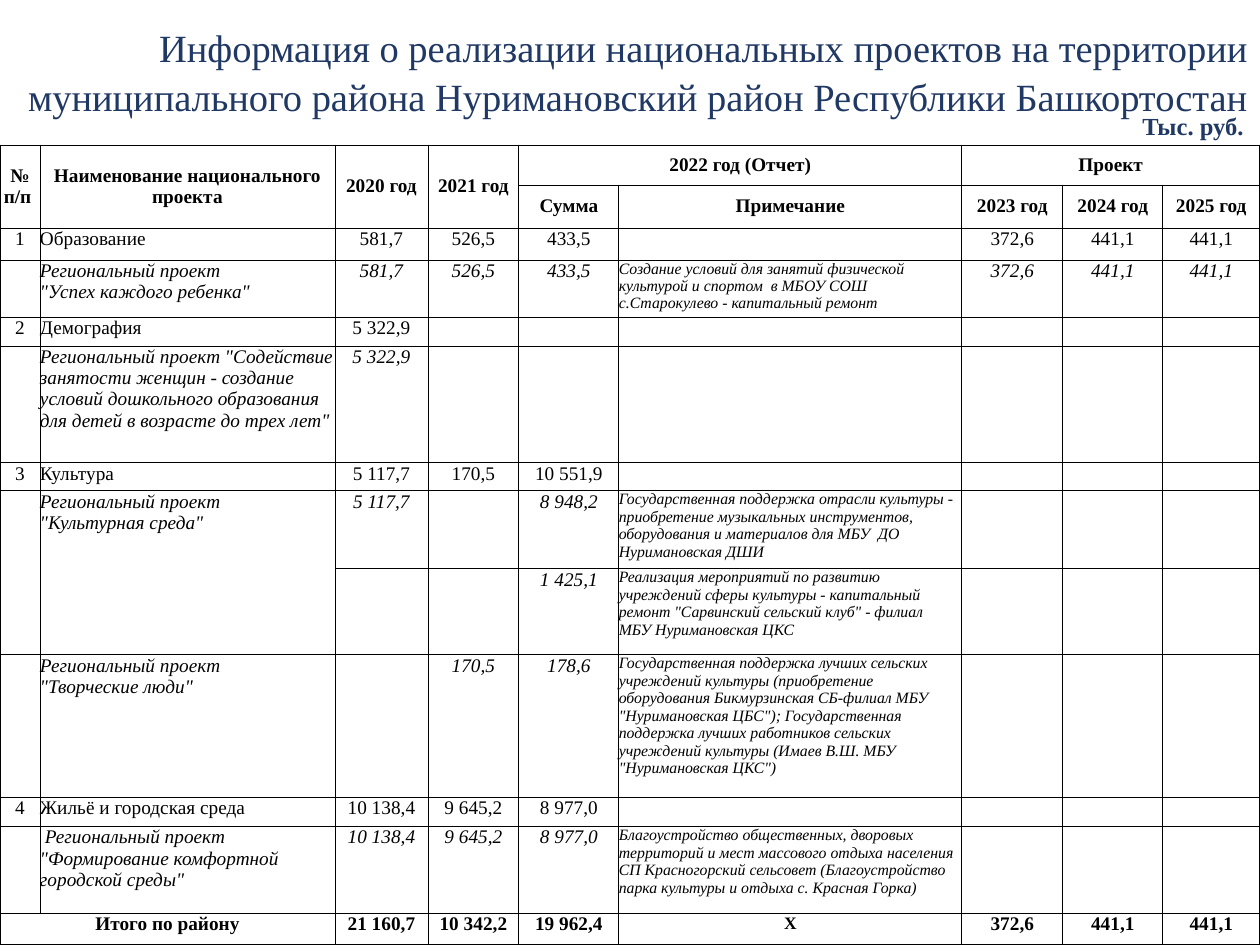
from lxml import etree
from pptx import Presentation
from pptx.dml.color import RGBColor
from pptx.enum.text import MSO_ANCHOR, PP_ALIGN
from pptx.oxml.ns import qn
from pptx.util import Emu, Pt

LEFT, CENTER, RIGHT = PP_ALIGN.LEFT, PP_ALIGN.CENTER, PP_ALIGN.RIGHT
TOP, MIDDLE = MSO_ANCHOR.TOP, MSO_ANCHOR.MIDDLE
EMU_PER_INCH, PX_PER_INCH = 914400, 126
FONT, NAVY, BLACK, WHITE = "Times New Roman", "203864", "000000", "FFFFFF"
NAME, NOTE = 1, 5

COL_WIDTHS = [40, 295, 93, 91, 100, 343, 101, 100, 97]
ROW_HEIGHTS = [40, 43, 32, 57, 29, 117, 28, 78, 86, 143, 29, 87, 31]
MERGES = [(0, 0, 1, 0), (0, 1, 1, 1), (0, 2, 1, 2), (0, 3, 1, 3),
          (0, 4, 0, 5), (0, 6, 0, 8), (7, 0, 8, 0), (7, 1, 8, 1), (12, 0, 12, 1)]

HEAD = {"bold": True}
PLAIN = {"bold": False}
PROJECT = {"bold": False, "italic": True}
TOTAL = {"bold": True}

ROWS = [
    (HEAD, ["№ п/п ", "Наименование национального проекта", "2020 год", "2021 год",
            "2022 год (Отчет)", "", "Проект", "", ""]),
    (HEAD, ["", "", "", "", "Сумма", "Примечание", "2023 год", "2024 год", "2025 год"]),
    (PLAIN, ["1", "Образование", "581,7", "526,5", "433,5", "", "372,6", "441,1", "441,1"]),
    (PROJECT, ["", "Региональный проект\n\"Успех каждого ребенка\"", "581,7", "526,5", "433,5",
               "Создание условий для занятий физической культурой и спортом  в МБОУ СОШ\n"
               "с.Старокулево - капитальный ремонт", "372,6", "441,1", "441,1"]),
    (PLAIN, ["2", "Демография", "5 322,9", "", "", "", "", "", ""]),
    (PROJECT, ["", "Региональный проект \"Содействие занятости женщин - создание условий "
               "дошкольного образования для детей в возрасте до трех лет\"",
               "5 322,9", "", "", "", "", "", ""]),
    (PLAIN, ["3", "Культура", "5 117,7", "170,5", "10 551,9", "", "", "", ""]),
    (PROJECT, ["", "Региональный проект\n\"Культурная среда\"", "5 117,7", "", "8 948,2",
               "Государственная поддержка отрасли культуры - приобретение музыкальных "
               "инструментов, оборудования и материалов для МБУ  ДО Нуримановская ДШИ",
               "", "", ""]),
    (PROJECT, ["", "", "", "", "1 425,1",
               "Реализация мероприятий по развитию учреждений сферы культуры - капитальный "
               "ремонт \"Сарвинский сельский клуб\" - филиал\nМБУ Нуримановская ЦКС",
               "", "", ""]),
    (PROJECT, ["", "Региональный проект\n\"Творческие люди\"", "", "170,5", "178,6",
               "Государственная поддержка лучших сельских учреждений культуры (приобретение "
               "оборудования Бикмурзинская СБ-филиал МБУ \"Нуримановская ЦБС\"); "
               "Государственная поддержка лучших работников сельских учреждений культуры "
               "(Имаев В.Ш. МБУ \"Нуримановская ЦКС\")", "", "", ""]),
    (PLAIN, ["4", "Жильё и городская среда", "10 138,4", "9 645,2", "8 977,0",
             "", "", "", ""]),
    (PROJECT, ["", " Региональный проект \"Формирование комфортной городской среды\"",
               "10 138,4", "9 645,2", "8 977,0",
               "Благоустройство общественных, дворовых территорий и мест массового отдыха "
               "населения СП Красногорский сельсовет (Благоустройство парка культуры и "
               "отдыха с. Красная Горка)", "", "", ""]),
    (TOTAL, ["Итого по району", "", "21 160,7", "10 342,2", "19 962,4", "Х",
             "372,6", "441,1", "441,1"]),
]


def px(n):
    return Emu(round(n * EMU_PER_INCH / PX_PER_INCH))


def rgb(value):
    return RGBColor.from_string(value)


class Deck:
    def __init__(self, width, height):
        self.prs = Presentation()
        self.prs.slide_width, self.prs.slide_height = px(width), px(height)
        self.s = self.prs.slides.add_slide(self.prs.slide_layouts[6])

    def fill_text(self, tf, text, size, color, align, fmt, spacing=None):
        for i, line in enumerate(text.split("\n")):
            p = tf.paragraphs[0] if i == 0 else tf.add_paragraph()
            p.alignment = align
            if spacing:
                p.line_spacing = spacing
            if not line:
                etree.SubElement(p._p, qn("a:endParaRPr"), sz=str(size * 100))
                continue
            r = p.add_run()
            r.text = line
            r.font.color.rgb = rgb(color)
            for key, value in {"name": FONT, "size": Pt(size), **fmt}.items():
                setattr(r.font, key, value)

    def text(self, box, text, size, align, wrap=True, spacing=None, **fmt):
        tf = self.s.shapes.add_textbox(*map(px, box)).text_frame
        tf.word_wrap = wrap
        self.fill_text(tf, text, size, NAVY, align, fmt, spacing)

    def border(self, cell):
        tcPr = cell._tc.get_or_add_tcPr()
        for side in ("lnL", "lnR", "lnT", "lnB"):
            ln = etree.SubElement(tcPr, qn(f"a:{side}"), w=str(Pt(0.5)))
            fill = etree.SubElement(ln, qn("a:solidFill"))
            etree.SubElement(fill, qn("a:srgbClr"), val=BLACK)

    def cell(self, cell, text, size, align, anchor, fmt):
        for side in ("left", "right", "top", "bottom"):
            setattr(cell, f"margin_{side}", 0)
        cell.vertical_anchor = anchor
        self.border(cell)
        cell.fill.solid()
        cell.fill.fore_color.rgb = rgb(WHITE)
        self.fill_text(cell.text_frame, text, size, BLACK, align, fmt)

    def table(self, left, top):
        box = left, top, sum(COL_WIDTHS), sum(ROW_HEIGHTS)
        table = self.s.shapes.add_table(len(ROWS), len(COL_WIDTHS), *map(px, box)).table
        table.first_row = table.horz_banding = False
        for column, width in zip(table.columns, COL_WIDTHS):
            column.width = px(width)
        for row, height in zip(table.rows, ROW_HEIGHTS):
            row.height = px(height)
        for i, (fmt, values) in enumerate(ROWS):
            body = fmt in (PLAIN, PROJECT)
            for j, value in enumerate(values):
                size = 11
                if j == NOTE and i > 1:
                    size = 9 if body else 10
                align = LEFT if body and j in (NAME, NOTE) else CENTER
                anchor = MIDDLE if i < 2 else TOP
                self.cell(table.cell(i, j), value, size, align, anchor, fmt)
        for r1, c1, r2, c2 in MERGES:
            table.cell(r1, c1).merge(table.cell(r2, c2))


def main():
    deck = Deck(1260, 945)
    deck.table(0, 145)
    deck.text((0, 16, 1260, 88),
              "Информация о реализации национальных проектов на территории "
              "муниципального района Нуримановский район Республики Башкортостан",
              22, RIGHT, spacing=1.05)
    deck.text((1130, 105, 127, 43), "Тыс. руб.", 14, LEFT, wrap=False, bold=True)
    deck.prs.save("out.pptx")


if __name__ == "__main__":
    main()
